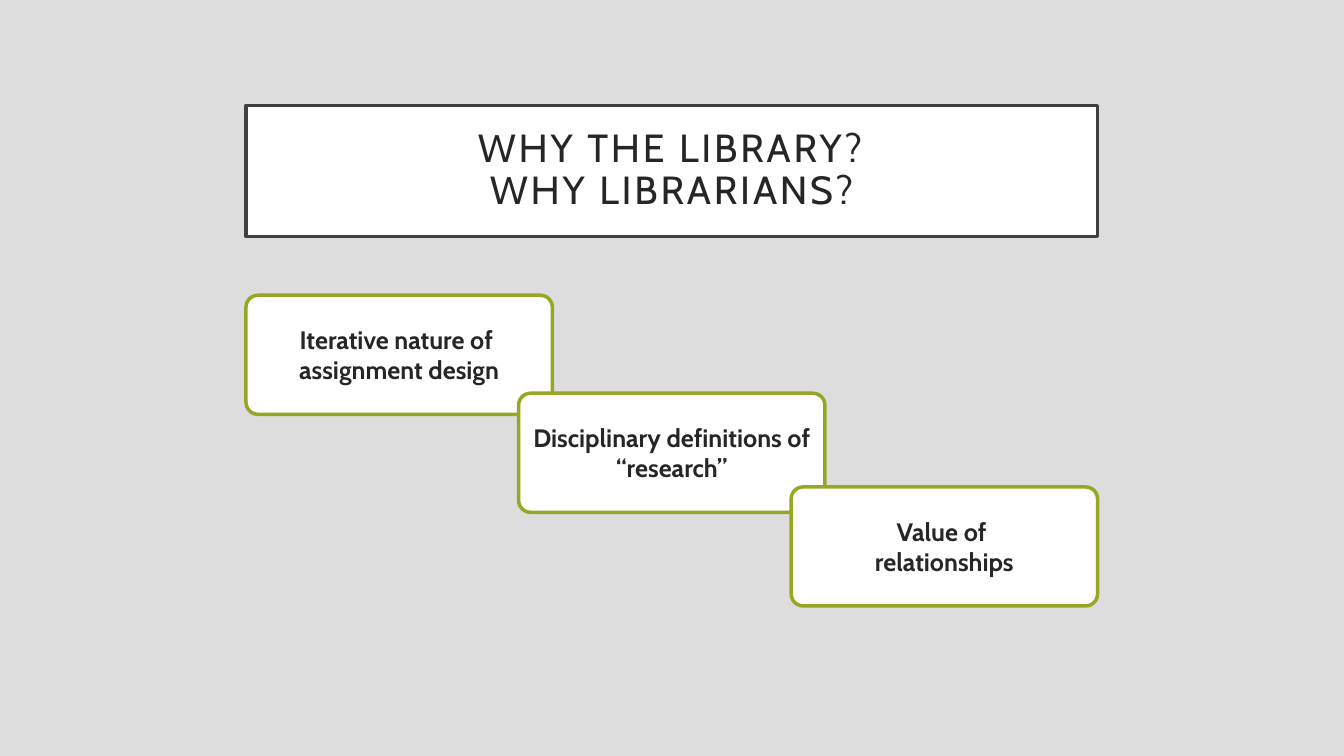
from dataclasses import dataclass

from pptx import Presentation
from pptx.dml.color import RGBColor
from pptx.enum.shapes import MSO_SHAPE
from pptx.enum.text import MSO_ANCHOR, MSO_AUTO_SIZE, PP_ALIGN
from pptx.util import Cm, Pt

ROUNDED = MSO_SHAPE.ROUNDED_RECTANGLE
MIDDLE = MSO_ANCHOR.MIDDLE
CENTER = PP_ALIGN.CENTER
NO_AUTOFIT = MSO_AUTO_SIZE.NONE
TITLE_ONLY = 5

FONT = "Cabin"
BACKGROUND, WHITE, INK = "DDDDDD", "FFFFFF", "262626"
TITLE_BORDER, GREEN = "404040", "97A623"

LEFT, RIGHT = 6.2, 27.66
CARD_WIDTH, CARD_HEIGHT = 7.72, 3.0


@dataclass
class Card:
    top: float
    paragraphs: list[str]


CARDS = [
    Card(7.44, ["Iterative nature of \nassignment design"]),
    Card(9.91, ["Disciplinary definitions of “research”"]),
    Card(12.27, ["Value of ", "relationships"]),
]


def set_fill(fill, color: str) -> None:
    fill.solid()
    fill.fore_color.rgb = RGBColor.from_string(color)


def format_box(shape, border: str) -> None:
    set_fill(shape.fill, WHITE)
    set_fill(shape.line.fill, border)
    shape.line.width = Pt(2.5)


def write_text(shape, paragraphs: list[str], *, size: float, bold: bool = False,
               inset: float = 0.2, line_spacing: float = 1.0,
               letter_spacing: float = 0) -> None:
    frame = shape.text_frame
    frame.word_wrap = True
    frame.auto_size = NO_AUTOFIT
    frame.vertical_anchor = MIDDLE
    frame.margin_left = frame.margin_right = Cm(inset)
    frame.margin_top = frame.margin_bottom = Cm(inset)
    for index, text in enumerate(paragraphs):
        paragraph = frame.add_paragraph() if index else frame.paragraphs[0]
        paragraph.text = text
        paragraph.alignment = CENTER
        paragraph.line_spacing = line_spacing
        for run in paragraph.runs:
            run.font.name = FONT
            run.font.size = Pt(size)
            run.font.bold = bold
            run.font.color.rgb = RGBColor.from_string(INK)
            if letter_spacing:
                run.font._element.set("spc", str(round(letter_spacing * 100)))


def add_title(slide) -> None:
    title = slide.shapes.title
    title.left, title.top = Cm(LEFT), Cm(2.66)
    title.width, title.height = Cm(RIGHT - LEFT), Cm(3.3)
    format_box(title, TITLE_BORDER)
    write_text(title, ["WHY THE LIBRARY?\nWHY LIBRARIANS?"], size=28,
               inset=0.51, line_spacing=0.9, letter_spacing=2)


def add_card(slide, card: Card, left: float) -> None:
    shape = slide.shapes.add_shape(ROUNDED, Cm(left), Cm(card.top),
                                   Cm(CARD_WIDTH), Cm(CARD_HEIGHT))
    shape.adjustments[0] = 0.1
    shape.shadow.inherit = False
    format_box(shape, GREEN)
    write_text(shape, card.paragraphs, size=18, bold=True)


def main() -> None:
    presentation = Presentation()
    presentation.slide_width, presentation.slide_height = Cm(33.87), Cm(19.05)
    slide = presentation.slides.add_slide(presentation.slide_layouts[TITLE_ONLY])
    set_fill(slide.background.fill, BACKGROUND)

    add_title(slide)

    # Cards step evenly from the title's left edge to its right edge
    step = (RIGHT - LEFT - CARD_WIDTH) / (len(CARDS) - 1)
    for index, card in enumerate(CARDS):
        add_card(slide, card, LEFT + index * step)

    presentation.save("out.pptx")


if __name__ == "__main__":
    main()
